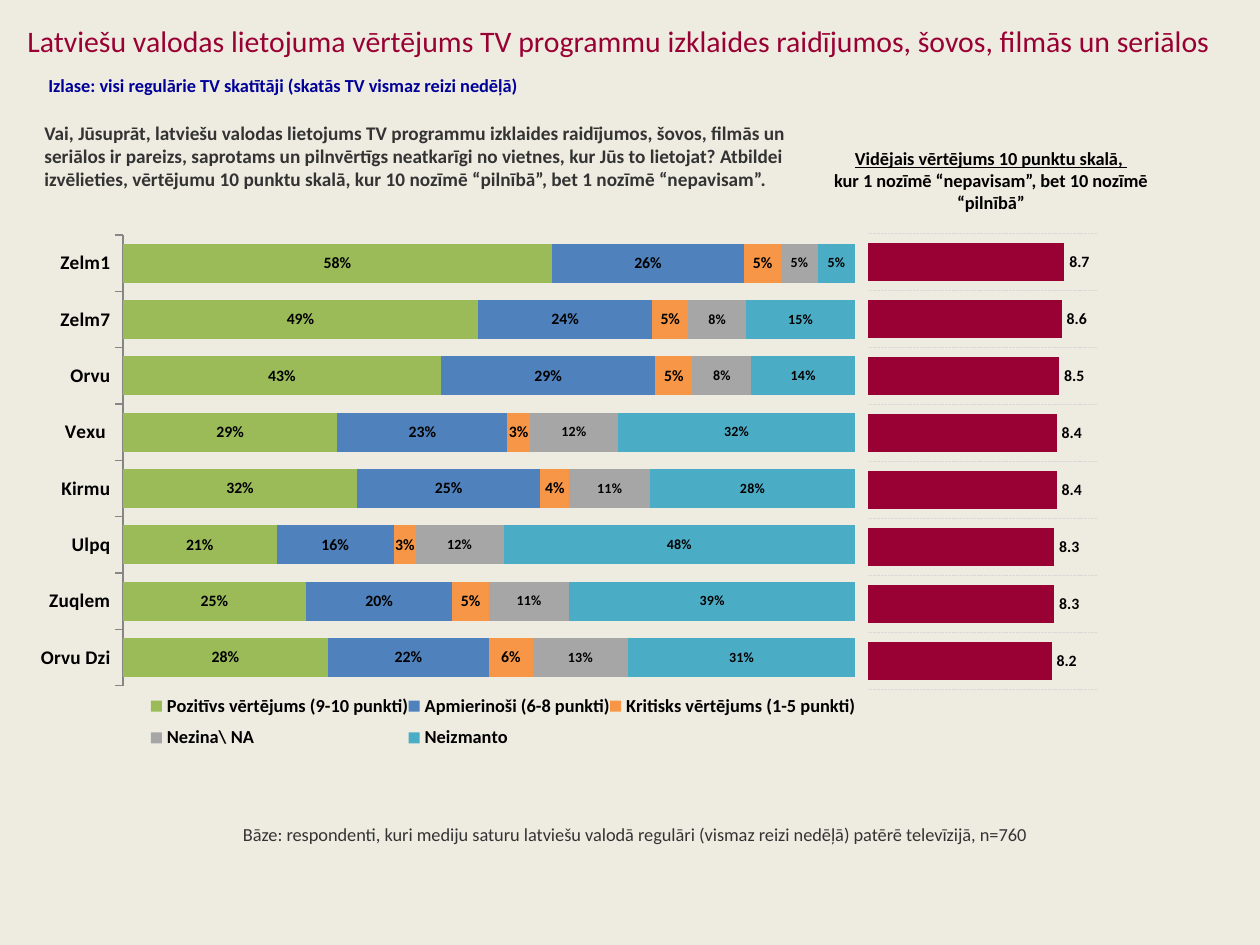
from pptx import Presentation
from pptx import util as u
from pptx.chart.data import CategoryChartData
from pptx.dml.color import RGBColor
from pptx.enum import chart as ch, dml, text
from pptx.oxml import parse_xml
from pptx.oxml.ns import nsdecls

EMU = 914400 / 126
FACE = "Calibri"
CREAM = RGBColor(0xEE, 0xEC, 0xE1)
WINE = RGBColor(0x99, 0x00, 0x33)
NAVY = RGBColor(0x00, 0x00, 0x99)
DARK = RGBColor(0x33, 0x33, 0x33)
BLACK = RGBColor(0, 0, 0)
GREEN = RGBColor(0x9B, 0xBB, 0x59)
BLUE = RGBColor(0x4F, 0x81, 0xBD)
ORANGE = RGBColor(0xF7, 0x96, 0x46)
GREY = RGBColor(0xA6, 0xA6, 0xA6)
TEAL = RGBColor(0x4B, 0xAC, 0xC6)
LINE = RGBColor(0x86, 0x86, 0x86)
PALE = RGBColor(0xD9, 0xD9, 0xD9)

# Content: box in px, then size, colour, bold and paragraphs
TEXTS = [
    dict(box=(15, 17, 1230, 63), size=17, color=WINE, bold=False, paras=[
        "Latviešu valodas lietojuma vērtējums TV programmu izklaides "
        "raidījumos, šovos, filmās un seriālos"]),
    dict(box=(36, 68, 604, 35), size=10.5, color=NAVY, bold=True, paras=[
        "Izlase: visi regulārie TV skatītāji (skatās TV vismaz reizi nedēļā)"]),
    dict(box=(32, 115, 767, 106), size=11, color=DARK, bold=True, paras=[
        "Vai, Jūsuprāt, latviešu valodas lietojums TV programmu izklaides "
        "raidījumos, šovos, filmās un seriālos ir pareizs, saprotams un "
        "pilnvērtīgs neatkarīgi no vietnes, kur Jūs to lietojat? Atbildei "
        "izvēlieties, vērtējumu 10 punktu skalā, kur 10 nozīmē “pilnībā”, "
        "bet 1 nozīmē “nepavisam”."]),
    dict(box=(817, 141, 348, 79), size=10.5, color=BLACK, bold=True,
         center=True, under=0, paras=[
        "Vidējais vērtējums 10 punktu skalā, ",
        "kur 1 nozīmē “nepavisam”, bet 10 nozīmē “pilnībā”"]),
    dict(box=(243, 810, 820, 35), size=10.5, color=DARK, bold=False,
         base=True, paras=[
        "Bāze: respondenti, kuri mediju saturu latviešu valodā regulāri "
        "(vismaz reizi nedēļā) patērē televīzijā, n=760"]),
]

# Channels from bottom to top: shares in percent, then mean score
ROWS = [
    ("Orvu Dzi", (28, 22, 6, 13, 31), 8.2),
    ("Zuqlem", (25, 20, 5, 11, 39), 8.3),
    ("Ulpq", (21, 16, 3, 12, 48), 8.3),
    ("Kirmu", (32, 25, 4, 11, 28), 8.4),
    ("Vexu ", (29, 23, 3, 12, 32), 8.4),
    ("Orvu", (43, 29, 5, 8, 14), 8.5),
    ("Zelm7", (49, 24, 5, 8, 15), 8.6),
    ("Zelm1", (58, 26, 5, 5, 5), 8.7),
]
PARTS = [
    ("Pozitīvs vērtējums (9-10 punkti)", GREEN, 9),
    ("Apmierinoši (6-8 punkti)", BLUE, 9),
    ("Kritisks vērtējums (1-5 punkti)", ORANGE, 9),
    ("Nezina\\ NA", GREY, 8),
    ("Neizmanto", TEAL, 8),
]
MEANS = [("Series 1", WINE, 9)]


def px(*vals):
    return [u.Emu(round(v * EMU)) for v in vals]


def style(font, size, color=BLACK, bold=True):
    look = dict(name=FACE, size=u.Pt(size), bold=bold)
    for key, val in look.items():
        setattr(font, key, val)
    font.color.rgb = color


def layout(node, spots, inner=False):
    """XML for a manual layout, placed in the given chart part."""
    for old in node.findall("{*}layout"):
        node.remove(old)
    tags = '<c:layoutTarget val="inner"/>' if inner else ""
    tags += '<c:xMode val="edge"/><c:yMode val="edge"/>'
    tags += "".join(f'<c:{k} val="{v}"/>' for k, v in zip("xywh", spots))
    part = parse_xml(f'<c:layout {nsdecls("c")}><c:manualLayout>{tags}'
                     '</c:manualLayout></c:layout>')
    if inner:
        node.insert(0, part)
    else:
        node.find("{*}legendPos").addnext(part)


def bars(slide, kind, box, cats, vals, parts, gap, fmt, spots, size):
    data = CategoryChartData(number_format=fmt)
    data.categories = cats
    for (name, _, _), col in zip(parts, vals):
        data.add_series(name, col)
    chart = slide.shapes.add_chart(kind, *px(*box), data).chart
    style(chart.font, size, bold=False)
    chart.has_title = chart.has_legend = False
    plot = chart.plots[0]
    plot.gap_width, plot.vary_by_categories = gap, False
    stack = len(parts) > 1
    spot = ch.XL_LABEL_POSITION
    for ser, (_, color, pts) in zip(plot.series, parts):
        ser.format.fill.solid()
        ser.format.fill.fore_color.rgb = color
        ser.invert_if_negative = False
        tags = ser.data_labels
        look = dict(show_value=True, number_format=fmt,
                    number_format_is_linked=False,
                    position=spot.CENTER if stack else spot.OUTSIDE_END)
        for key, val in look.items():
            setattr(tags, key, val)
        style(tags.font, pts)
    chart.value_axis.visible = False
    chart.value_axis.has_major_gridlines = False
    layout(plot._element.getparent(), spots, inner=True)
    return chart


deck = Presentation()
deck.slide_width, deck.slide_height = px(1260, 945)
slide = deck.slides.add_slide(deck.slide_layouts[6])
slide.background.fill.solid()
slide.background.fill.fore_color.rgb = CREAM

# Headings, question and base note
for item in TEXTS:
    frame = slide.shapes.add_textbox(*px(*item["box"])).text_frame
    frame.word_wrap = True
    if item.get("base"):
        frame.vertical_anchor = text.MSO_ANCHOR.BOTTOM
        for side in ("left", "top", "right", "bottom"):
            setattr(frame, "margin_" + side, 0)
    for i, words in enumerate(item["paras"]):
        para = frame.add_paragraph() if i else frame.paragraphs[0]
        if item.get("center"):
            para.alignment = text.PP_ALIGN.CENTER
        run = para.add_run()
        run.text = words
        style(run.font, item["size"], item["color"], item["bold"])
        if item.get("under") == i:
            run.font.underline = True

# Stacked shares
cats, shares, means = zip(*ROWS)
cols = [[v / 100 for v in col] for col in zip(*shares)]
chart = bars(slide, ch.XL_CHART_TYPE.BAR_STACKED_100, (36, 205, 820, 559),
             cats, cols, PARTS, 44, "0%", (0.106, 0.054, 0.893, 0.806), 18)
chart.plots[0].overlap = 100
axis = chart.category_axis
axis.major_tick_mark = ch.XL_TICK_MARK.OUTSIDE
axis.format.line.color.rgb = LINE
axis.format.line.width = u.Pt(0.75)
style(axis.tick_labels.font, 11)
chart.has_legend = True
chart.legend.position = ch.XL_LEGEND_POSITION.TOP
chart.legend.include_in_layout = False
style(chart.legend.font, 10.5)
layout(chart.legend._element, (0.14, 0.86, 0.86, 0.13))

# Mean scores
chart = bars(slide, ch.XL_CHART_TYPE.BAR_CLUSTERED, (856, 224, 249, 475),
             [str(i + 1) for i in range(len(ROWS))], [means], MEANS, 50, "0.0",
             (0.05, 0.02, 0.92, 0.96), 7)
axis = chart.value_axis
for key, val in dict(minimum_scale=1, maximum_scale=10, major_unit=3).items():
    setattr(axis, key, val)
axis = chart.category_axis
axis.visible = False
axis.has_major_gridlines = True
grid = axis.major_gridlines.format.line
grid.color.rgb, grid.width = PALE, u.Pt(0.5)
grid.dash_style = dml.MSO_LINE.SQUARE_DOT

deck.save("out.pptx")
